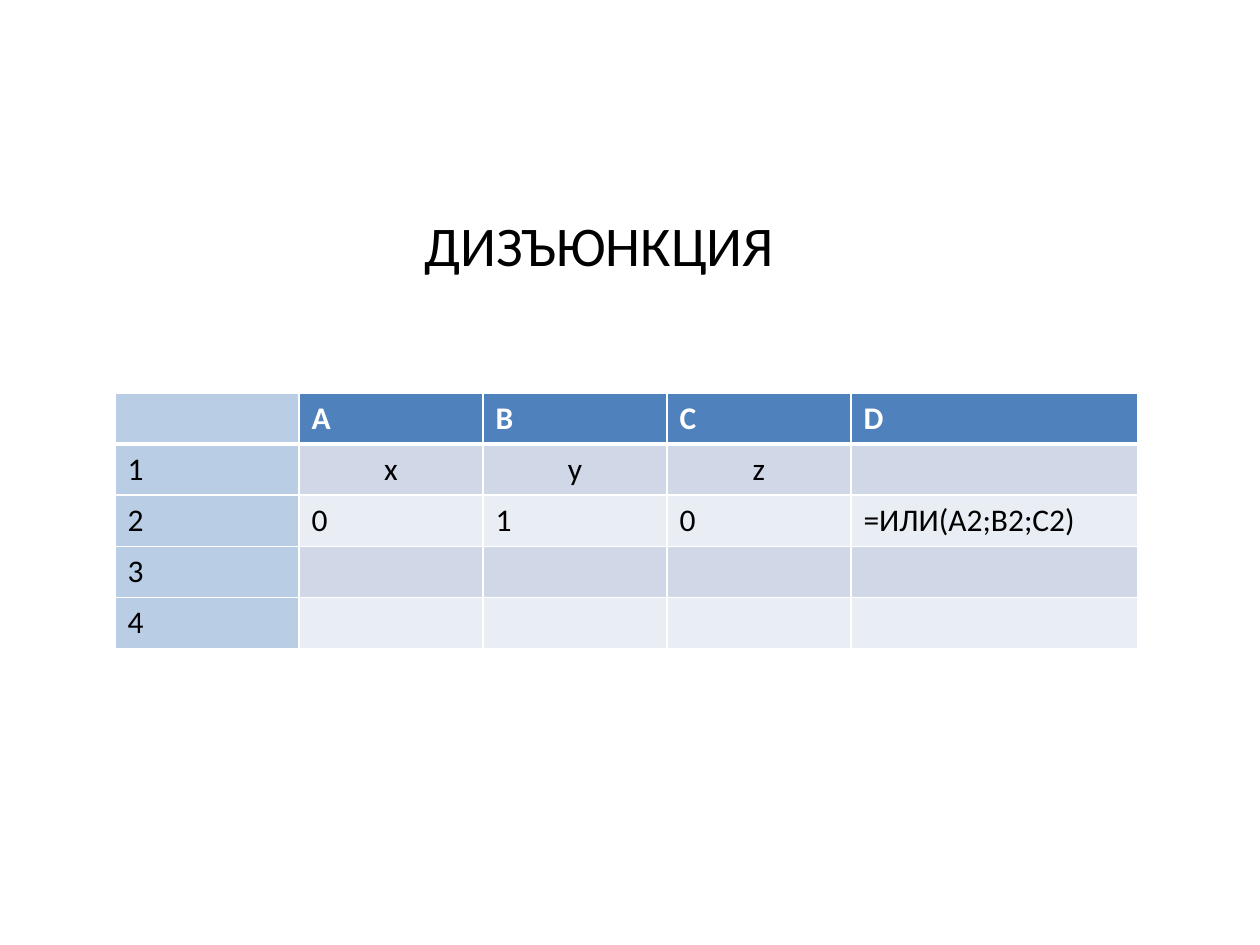
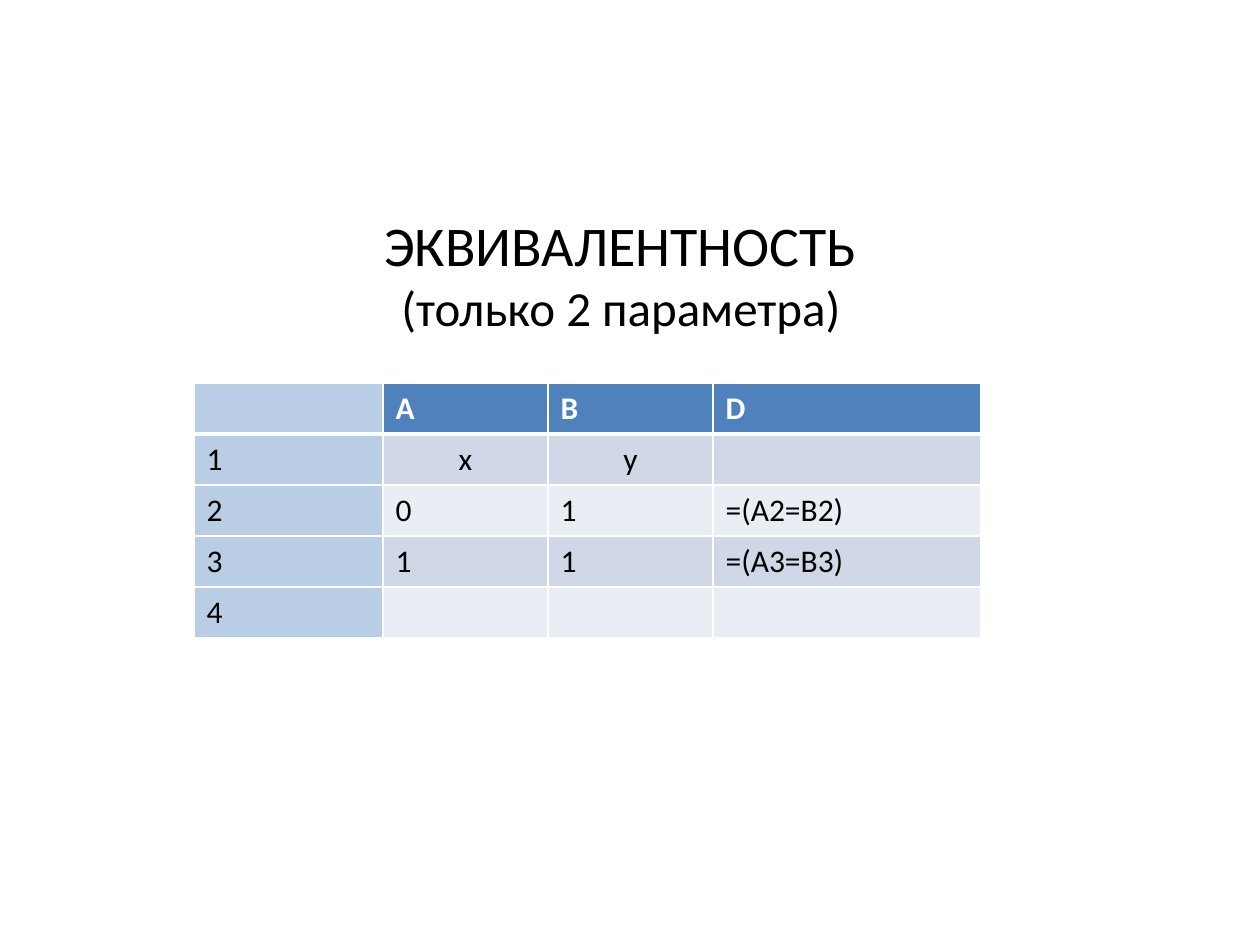
from lxml import etree
from pptx import Presentation
from pptx import util as u
from pptx.dml.color import RGBColor
from pptx.enum import text
from pptx.oxml import ns

# Shared style
PX = u.Inches(1) / 126
FONT = "Calibri"
BLACK = RGBColor(0x00, 0x00, 0x00)
WHITE = RGBColor(0xFF, 0xFF, 0xFF)
HEADER = RGBColor(0x4F, 0x81, 0xBD)
ROW_LABEL = RGBColor(0xB9, 0xCD, 0xE5)
BANDS = (RGBColor(0xE9, 0xED, 0xF4), RGBColor(0xD0, 0xD8, 0xE8))
TITLE_TOP = 204
TITLE_SIZES = (32, 28)
CELL_SIZE = 18
ROW_HEIGHT = 51
THIN, THICK = 1, 3
CENTERED = ("x", "y", "z")


def px(length):
    return u.Emu(round(length * PX))


class Deck:
    """Holds the presentation, its style and the current slide."""

    def __init__(self):
        self.deck = Presentation()
        self.deck.slide_width, self.deck.slide_height = px(1260), px(945)
        self.page = None

    def new_page(self):
        self.page = self.deck.slides.add_slide(self.deck.slide_layouts[6])

    def style(self, para, size, color, bold=False):
        for span in para.runs:
            span.font.name = FONT
            span.font.size = u.Pt(size)
            span.font.bold = bold
            span.font.color.rgb = color

    def title(self, left, width, height, lines):
        box = self.page.shapes.add_textbox(px(left), px(TITLE_TOP), px(width), px(height))
        frame = box.text_frame
        frame.word_wrap = False
        frame.auto_size = text.MSO_AUTO_SIZE.SHAPE_TO_FIT_TEXT
        frame.text = "\n".join(lines)
        for number, (para, size) in enumerate(zip(frame.paragraphs, TITLE_SIZES)):
            para.alignment = text.PP_ALIGN.CENTER if number else text.PP_ALIGN.LEFT
            self.style(para, size, BLACK)

    def borders(self, cell, top, bottom):
        props = cell._tc.get_or_add_tcPr()
        widths = {"a:lnL": THIN, "a:lnR": THIN, "a:lnT": top, "a:lnB": bottom}
        for tag, width in widths.items():
            line = etree.SubElement(props, ns.qn(tag), w=str(u.Pt(width)))
            fill = etree.SubElement(line, ns.qn("a:solidFill"))
            etree.SubElement(fill, ns.qn("a:srgbClr"), val=str(WHITE))

    def cell(self, cell, row, col, value):
        header = row == 0
        self.borders(cell, THICK if row == 1 else THIN, THICK if header else THIN)
        cell.fill.solid()
        if col == 0:
            cell.fill.fore_color.rgb = ROW_LABEL
        else:
            cell.fill.fore_color.rgb = HEADER if header else BANDS[row % 2]
        cell.text_frame.text = value
        para = cell.text_frame.paragraphs[0]
        if value in CENTERED:
            para.alignment = text.PP_ALIGN.CENTER
        self.style(para, CELL_SIZE, WHITE if header else BLACK, bold=header)

    def sheet(self, left, top, widths, rows):
        """Draws a spreadsheet fragment; row numbers are added in front."""
        frame = self.page.shapes.add_table(
            len(rows), len(widths), px(left), px(top),
            px(sum(widths)), px(ROW_HEIGHT * len(rows)))
        table = frame.table
        table.horz_banding = False
        for column, width in zip(table.columns, widths):
            column.width = px(width)
        for row, values in enumerate(rows):
            table.rows[row].height = px(ROW_HEIGHT)
            label = str(row) if row else ""
            for col, value in enumerate([label, *values]):
                self.cell(table.cell(row, col), row, col, value)


def main():
    slides = Deck()

    # Disjunction
    slides.new_page()
    slides.sheet(115, 393, [184] * 4 + [287], [
        ["A", "B", "C", "D"],
        ["x", "y", "z", ""],
        ["0", "1", "0", "=ИЛИ(А2;B2;C2)"],
        [""] * 4,
        [""] * 4,
    ])
    slides.title(412, 378, 81, ["ДИЗЪЮНКЦИЯ"])

    # Equivalence
    slides.new_page()
    slides.sheet(194, 383, [189, 165, 165, 268], [
        ["A", "B", "D"],
        ["x", "y", ""],
        ["0", "1", "=(А2=B2)"],
        ["1", "1", "=(А3=B3)"],
        [""] * 3,
    ])
    slides.title(372, 503, 140, ["ЭКВИВАЛЕНТНОСТЬ", "(только 2 параметра)"])

    slides.deck.save("out.pptx")


if __name__ == "__main__":
    main()
